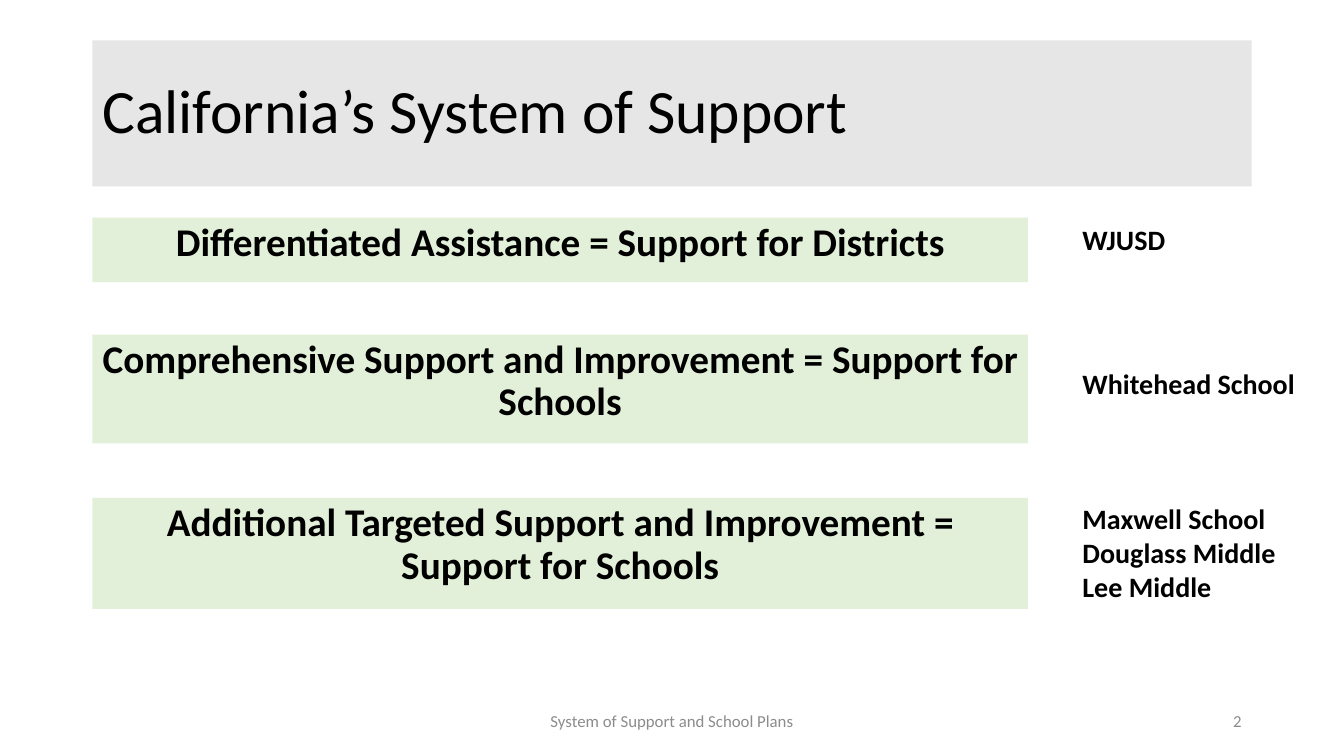
from dataclasses import dataclass
from typing import Optional

from pptx import Presentation
from pptx import util as u
from pptx.dml.color import RGBColor
from pptx.enum import shapes, text

# Grid: 160 columns by 90 rows on a 16:9 page
WIDTH, HEIGHT = u.Inches(13.33), u.Inches(7.5)
COLUMNS, ROWS = 160, 90
LEFT, SUPPORT_WIDTH, SCHOOL_LEFT = 11, 111.36, 127.68
FOOTER_TOP, FOOTER_HEIGHT = 83.4, 4.8

BLACK = RGBColor(0x00, 0x00, 0x00)
GRAY = RGBColor(0x8C, 0x8C, 0x8C)
TITLE_FILL = RGBColor(0xE7, 0xE6, 0xE6)
SUPPORT_FILL = RGBColor(0xE2, 0xF0, 0xD9)


@dataclass(frozen=True)
class Style:
    size: int
    color: RGBColor = BLACK
    bold: bool = False
    align: text.PP_ALIGN = text.PP_ALIGN.LEFT
    anchor: text.MSO_ANCHOR = text.MSO_ANCHOR.TOP
    spacing: float = 1.0
    before: int = 0
    fill: Optional[RGBColor] = None


@dataclass(frozen=True)
class Block:
    column: float
    row: float
    columns: float
    rows: float
    lines: tuple[str, ...]
    style: Style


@dataclass(frozen=True)
class Level:
    row: float
    rows: float
    support: str
    school_row: float
    school_columns: float
    school_rows: float
    schools: tuple[str, ...]


MIDDLE = text.MSO_ANCHOR.MIDDLE
TITLE = Style(44, anchor=MIDDLE, spacing=0.9, fill=TITLE_FILL)
SUPPORT = Style(28, bold=True, align=text.PP_ALIGN.CENTER, spacing=0.9,
                before=10, fill=SUPPORT_FILL)
SCHOOL = Style(20, bold=True)
FOOTER = Style(12, GRAY, align=text.PP_ALIGN.CENTER, anchor=MIDDLE)
NUMBER = Style(12, GRAY, align=text.PP_ALIGN.RIGHT, anchor=MIDDLE)

LEVELS = (
    Level(25.92, 7.68, "Differentiated Assistance = Support for Districts",
          25.92, 19.68, 5.28, ("WJUSD",)),
    Level(39.84, 12.96,
          "Comprehensive Support and Improvement = Support for Schools",
          43.08, 28, 5.28, ("Whitehead School",)),
    Level(59.28, 13.2,
          "Additional Targeted Support and Improvement = Support for Schools",
          59.16, 26.52, 13.32,
          ("Maxwell School", "Douglass Middle", "Lee Middle")),
)


def draw_block(page, block: Block) -> None:
    style = block.style
    place = (round(WIDTH * block.column / COLUMNS),
             round(HEIGHT * block.row / ROWS),
             round(WIDTH * block.columns / COLUMNS),
             round(HEIGHT * block.rows / ROWS))
    if style.fill is None:
        box = page.shapes.add_textbox(*place)
    else:
        box = page.shapes.add_shape(shapes.MSO_SHAPE.RECTANGLE, *place)
        box.shadow.inherit = False
        box.fill.solid()
        box.fill.fore_color.rgb = style.fill
        box.line.fill.background()

    frame = box.text_frame
    frame.word_wrap = True
    frame.vertical_anchor = style.anchor
    for index, line in enumerate(block.lines):
        para = frame.add_paragraph() if index else frame.paragraphs[0]
        para.alignment = style.align
        para.line_spacing = style.spacing
        para.space_before = u.Pt(style.before)
        span = para.add_run()
        span.text = line
        span.font.name = "Calibri"
        span.font.size = u.Pt(style.size)
        span.font.bold = style.bold
        span.font.color.rgb = style.color


def draw_level(page, level: Level) -> None:
    draw_block(page, Block(LEFT, level.row, SUPPORT_WIDTH, level.rows,
                           (level.support,), SUPPORT))
    draw_block(page, Block(SCHOOL_LEFT, level.school_row, level.school_columns,
                           level.school_rows, level.schools, SCHOOL))


def main() -> None:
    deck = Presentation()
    deck.slide_width, deck.slide_height = WIDTH, HEIGHT
    page = deck.slides.add_slide(deck.slide_layouts[6])

    # Title band
    draw_block(page, Block(LEFT, 4.8, 138, 17.4,
                           ("California’s System of Support",), TITLE))

    # Levels of support with their districts and schools
    for level in LEVELS:
        draw_level(page, level)

    # Footer and page number
    draw_block(page, Block(53, FOOTER_TOP, 54, FOOTER_HEIGHT,
                           ("System of Support and School Plans",), FOOTER))
    draw_block(page, Block(113, FOOTER_TOP, 36, FOOTER_HEIGHT, ("2",), NUMBER))

    deck.save("out.pptx")


if __name__ == "__main__":
    main()
